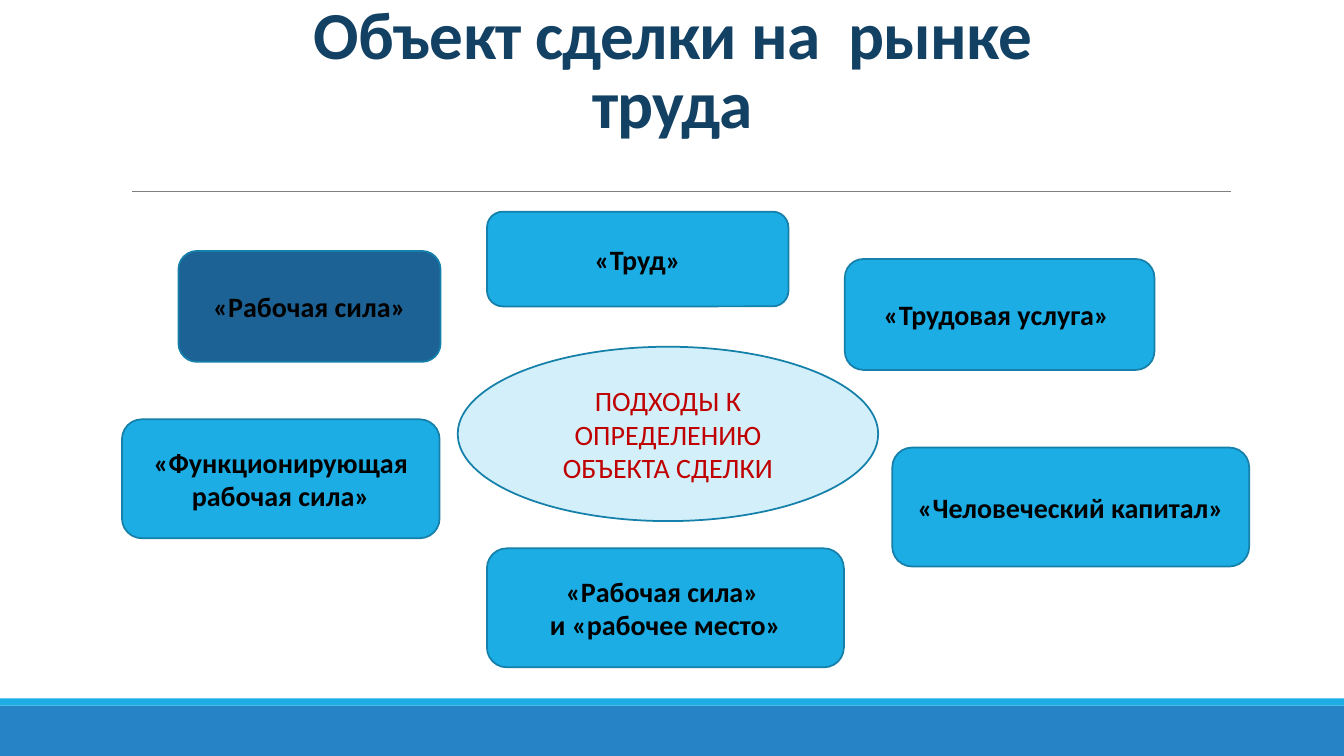
from lxml import etree
from pptx import Presentation
from pptx.dml.color import RGBColor
from pptx.enum.shapes import MSO_CONNECTOR as Connector, MSO_SHAPE as Shape
from pptx.enum.text import MSO_ANCHOR as Anchor, PP_ALIGN as Align
from pptx.oxml.ns import qn
from pptx.util import Inches, Pt

# Content
TITLE = "Объект сделки на  рынке труда"
CENTRE = ("ПОДХОДЫ К ОПРЕДЕЛЕНИЮ ОБЪЕКТА СДЕЛКИ", (4.54, 3.44, 4.17, 1.73))
# wording, fill, (left, top, width, height) in inches
APPROACHES = [
    ("«Труд»", "sky", (4.83, 2.1, 2.99, 0.94)),
    ("«Рабочая сила»", "navy", (1.77, 2.49, 2.6, 1.1)),
    ("«Функционирующая рабочая сила»", "sky", (1.21, 4.16, 3.15, 1.18)),
    ("«Рабочая сила» \vи «рабочее место»", "sky", (4.83, 5.44, 3.54, 1.18)),
    ("«Трудовая услуга» ", "sky", (8.38, 2.57, 3.07, 1.1)),
    ("«Человеческий капитал»", "sky", (8.85, 4.44, 3.54, 1.18)),
]

COLOURS = {
    "sky": "1CADE4", "navy": "1D6294", "pale": "D2EFFA", "outline": "1580A9",
    "footer": "2683C6", "rule": "808080", "title": "134163",
    "red": "C00000", "black": "000000",
}
FONT = "Calibri"
WIDTH, HEIGHT = 13.33, 7.5
FOOTER, STRIPE = 0.5, 0.07


def colour(name):
    return RGBColor.from_string(COLOURS[name])


def write(shape, wording, size, ink, bold=False, anchor=Anchor.MIDDLE):
    frame = shape.text_frame
    frame.word_wrap = True
    frame.vertical_anchor = anchor
    paragraph = frame.paragraphs[0]
    paragraph.text = wording
    paragraph.alignment = Align.CENTER
    for run in paragraph.runs:
        run.font.name = FONT
        run.font.size = Pt(size)
        run.font.bold = bold
        run.font.color.rgb = colour(ink)
    return paragraph


def draw(slide, kind, box, fill, outline=None):
    shape = slide.shapes.add_shape(kind, *map(Inches, box))
    shape.shadow.inherit = False
    shape.fill.solid()
    shape.fill.fore_color.rgb = colour(fill)
    if outline:
        shape.line.color.rgb = colour(outline)
        shape.line.width = Pt(1.25)
    else:
        shape.line.fill.background()
    return shape


def main():
    deck = Presentation()
    deck.slide_width, deck.slide_height = Inches(WIDTH), Inches(HEIGHT)
    slide = deck.slides.add_slide(deck.slide_layouts[6])

    # Footer band and the stripe on top of it
    footer_top = HEIGHT - FOOTER
    draw(slide, Shape.RECTANGLE, (0, footer_top, WIDTH, FOOTER), "footer")
    draw(slide, Shape.RECTANGLE, (0, footer_top - STRIPE, WIDTH, STRIPE), "sky")

    # Rule under the title
    rule = slide.shapes.add_connector(
        Connector.STRAIGHT, *map(Inches, (1.31, 1.9, 12.21, 1.9)))
    rule.line.color.rgb = colour("rule")
    rule.line.width = Pt(0.5)
    etree.SubElement(rule._element.spPr, qn("a:effectLst"))

    # Title
    title = slide.shapes.add_textbox(*map(Inches, (2.17, 0.55, 9, 0.91)))
    heading = write(title, TITLE, 48, "title", True, Anchor.BOTTOM)
    heading.line_spacing = 0.85
    heading.runs[0].font._element.set("spc", "-50")

    # Central question and the approaches around it
    wording, box = CENTRE
    write(draw(slide, Shape.OVAL, box, "pale", "outline"), wording, 20, "red")
    for wording, fill, box in APPROACHES:
        card = draw(slide, Shape.ROUNDED_RECTANGLE, box, fill, "outline")
        write(card, wording, 20, "black", True)

    deck.save("out.pptx")


if __name__ == "__main__":
    main()
